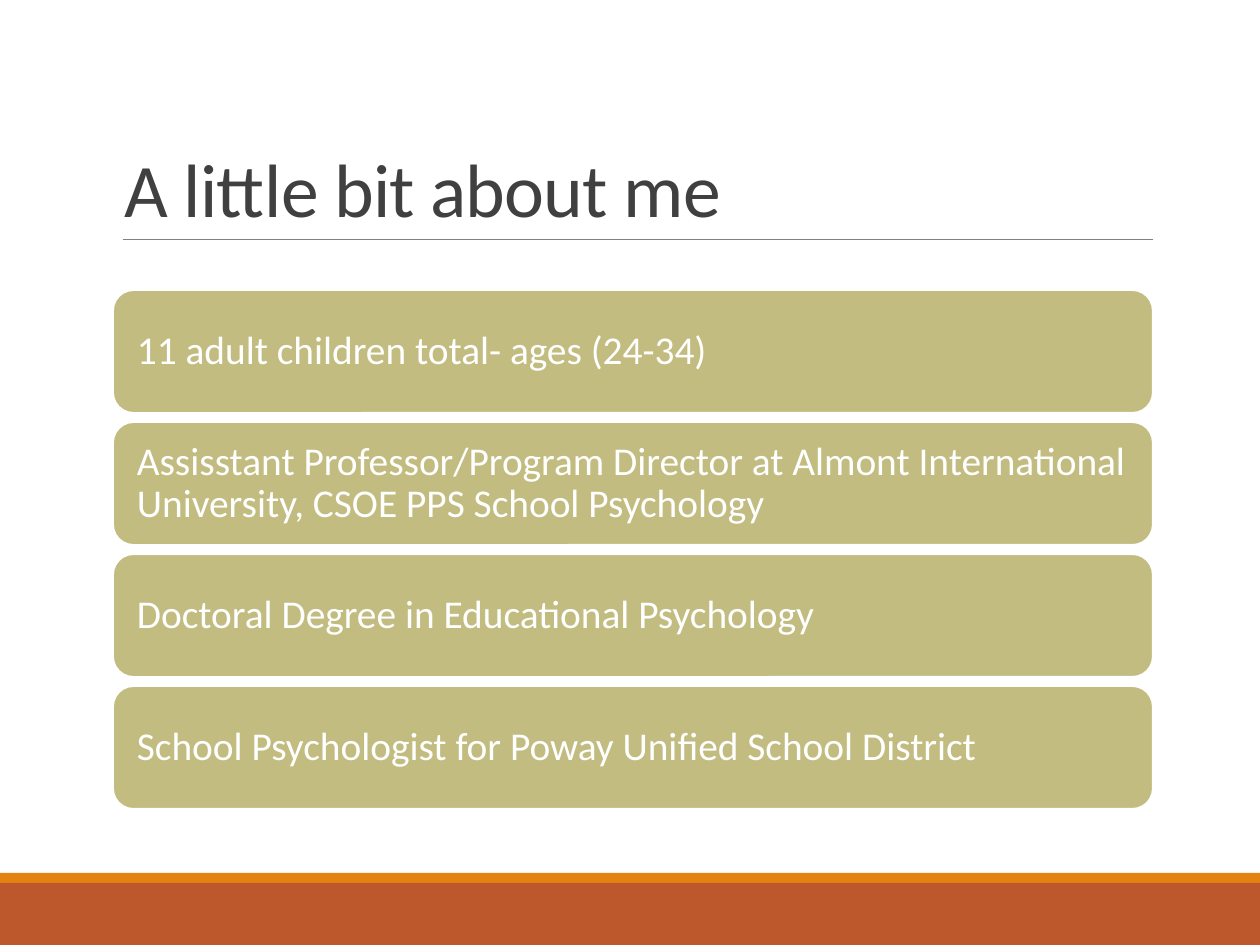
"""Build the "A little bit about me" slide."""
from dataclasses import dataclass

from lxml import etree
from pptx import Presentation
from pptx.dml.color import RGBColor
from pptx.enum.shapes import MSO_CONNECTOR as CONN, MSO_SHAPE as SHAPE
from pptx.enum.text import MSO_ANCHOR as ANCHOR, MSO_AUTO_SIZE as FIT, PP_ALIGN as ALIGN
from pptx.oxml.ns import qn
from pptx.util import Emu, Pt

TITLE = "A little bit about me"
FACTS = [
    "11 adult children total- ages (24-34)",
    "Assisstant Professor/Program Director at Almont International "
    "University, CSOE PPS School Psychology",
    "Doctoral Degree in Educational Psychology",
    "School Psychologist for Poway Unified School District",
]
SLIDE_W, SLIDE_H = 1260, 945
TITLE_BOX = (113, 40, 1040, 199)
RULE = (123, 239, 1153, 239)
CARD_LEFT, CARD_TOP, CARD_W, CARD_H, CARD_PITCH = 113, 290, 1040, 123, 132
CARD_INSET = 18
STRIPE_TOP, BAND_TOP = 873, 883


@dataclass(frozen=True)
class Theme:
    """Colours, font and type sizes."""
    font: str = "Calibri"
    title: str = "404040"
    rule: str = "808080"
    card: str = "C2BC80"
    white: str = "FFFFFF"
    stripe: str = "E48312"
    band: str = "BD582C"
    title_size: int = 48
    card_size: int = 25


THEME = Theme()


def px(n):
    """Turn px into EMU."""
    return Emu(n * 8064)


def rgb(color):
    """Turn a hex string into a colour."""
    return RGBColor.from_string(color)


def add_box(slide, kind, box, fill, line=None):
    """Add a filled shape, outlined if a line colour is given."""
    sp = slide.shapes.add_shape(kind, *map(px, box))
    sp.shadow.inherit = False
    sp.fill.solid()
    sp.fill.fore_color.rgb = rgb(fill)
    if line:
        sp.line.color.rgb = rgb(line)
        sp.line.width = Pt(1.25)
    else:
        sp.line.fill.background()
    return sp


def write(sp, text, size, color, anchor, spacing):
    """Write one left-aligned paragraph and return its run."""
    tf = sp.text_frame
    tf.word_wrap = True
    tf.auto_size = FIT.NONE
    tf.vertical_anchor = anchor
    p = tf.paragraphs[0]
    p.alignment = ALIGN.LEFT
    p.line_spacing = spacing
    r = p.add_run()
    r.text = text
    r.font.name = THEME.font
    r.font.size = Pt(size)
    r.font.color.rgb = rgb(color)
    return r


def add_title(slide):
    """Place the title and the rule under it."""
    sp = slide.shapes.title
    sp.left, sp.top, sp.width, sp.height = map(px, TITLE_BOX)
    r = write(sp, TITLE, THEME.title_size, THEME.title, ANCHOR.BOTTOM, 0.85)
    r.font._element.set("spc", "-50")
    rule = slide.shapes.add_connector(CONN.STRAIGHT, *map(px, RULE))
    rule.line.color.rgb = rgb(THEME.rule)
    rule.line.width = Pt(0.5)
    etree.SubElement(rule._element.spPr, qn("a:effectLst"))


def add_cards(slide):
    """Stack one rounded card per fact."""
    for i, fact in enumerate(FACTS):
        box = (CARD_LEFT, CARD_TOP + i * CARD_PITCH, CARD_W, CARD_H)
        sp = add_box(slide, SHAPE.ROUNDED_RECTANGLE, box, THEME.card, THEME.white)
        sp.text_frame.margin_left = sp.text_frame.margin_right = px(CARD_INSET)
        write(sp, fact, THEME.card_size, THEME.white, ANCHOR.MIDDLE, 0.9)


def main():
    """Build and save the slide."""
    prs = Presentation()
    prs.slide_width, prs.slide_height = px(SLIDE_W), px(SLIDE_H)
    slide = prs.slides.add_slide(prs.slide_layouts[5])
    for top, bottom, fill in [(STRIPE_TOP, BAND_TOP, THEME.stripe),
                              (BAND_TOP, SLIDE_H, THEME.band)]:
        add_box(slide, SHAPE.RECTANGLE, (0, top, SLIDE_W, bottom - top), fill)
    add_title(slide)
    add_cards(slide)
    prs.save("out.pptx")


if __name__ == "__main__":
    main()
